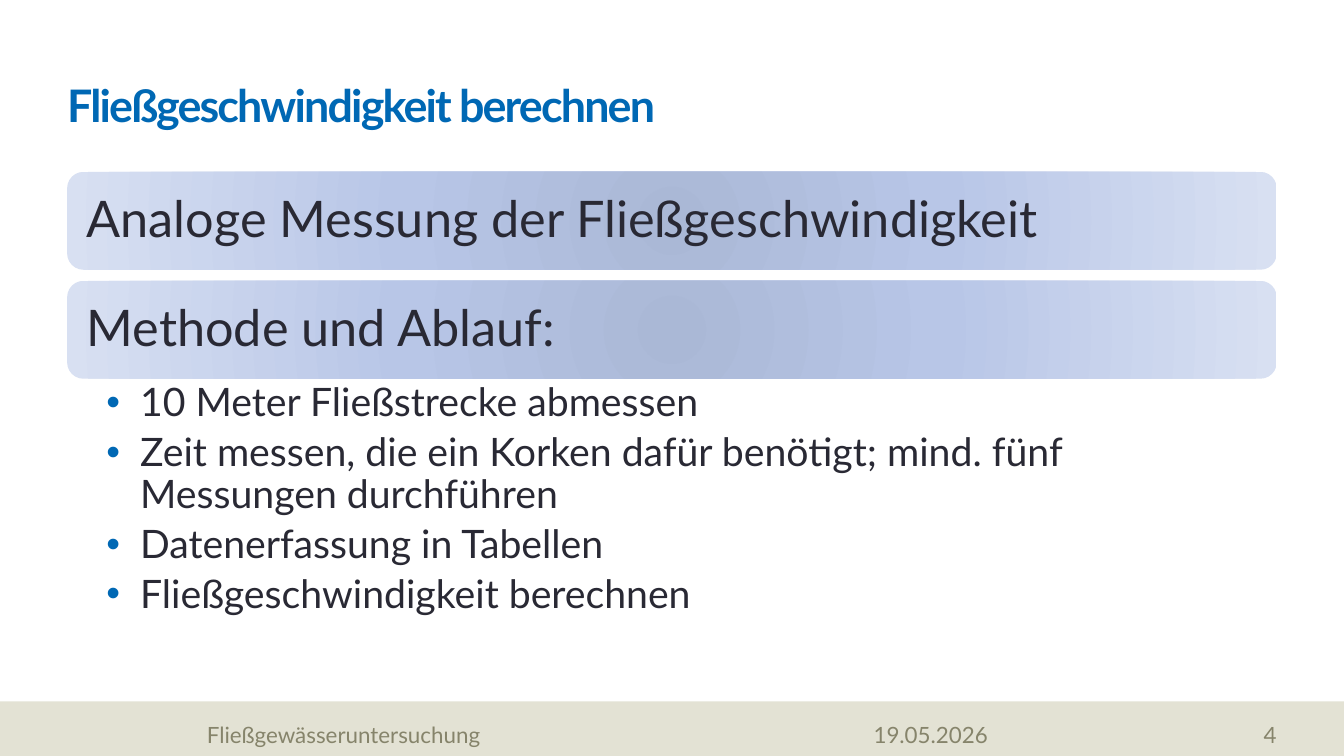
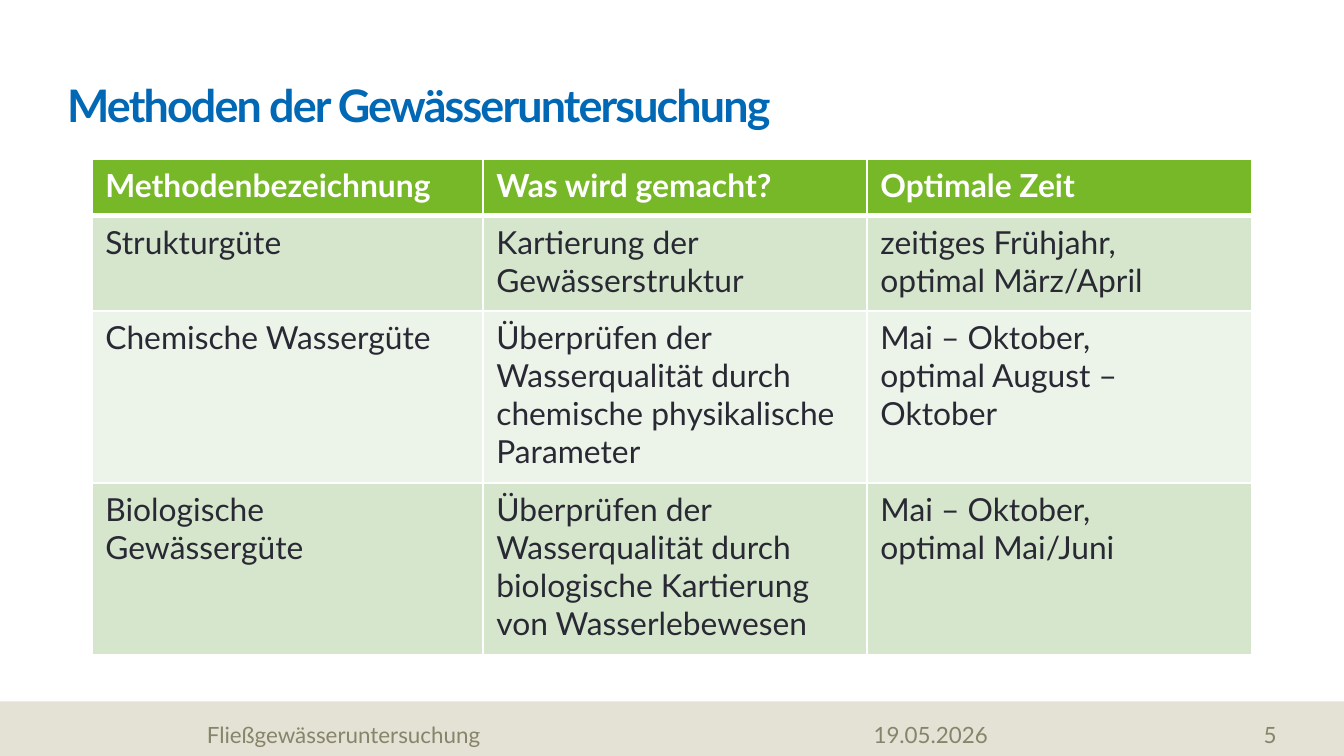
from lxml.etree import SubElement
from pptx import Presentation
from pptx.dml.color import RGBColor
from pptx.enum.shapes import MSO_SHAPE as Preset
from pptx.enum.text import MSO_ANCHOR as Anchor, MSO_AUTO_SIZE as AutoSize, PP_ALIGN as Align
from pptx.oxml.ns import qn
from pptx.util import Cm, Pt

FONT = "Lato"
BLUE, DARK, WHITE = "0068B4", "292934", "FFFFFF"
BAND, FOOTER_GREY = "E3E2D4", "86846B"
GREEN, ROW_GREENS = "76B828", ("D6E6CD", "ECF3E8")
BAR_GRADIENT = ((0, "AAB8D6"), (45, "B8C6E7"), (100, "D8E0F2"))

WIDTH, HEIGHT, MARGIN = 25.4, 14.29, 1.27
BODY_WIDTH = WIDTH - 2 * MARGIN
BAND_TOP = 13.26
BAR_TOP, BAR_HEIGHT, BAR_STEP = 3.25, 1.85, 2.06

FOOTER = "Fließgewässeruntersuchung"
DATE = "19.05.2026"

SPEED_TITLE = "Fließgeschwindigkeit berechnen"
BARS = ["Analoge Messung der Fließgeschwindigkeit", "Methode und Ablauf:"]
STEPS = [
    "10 Meter Fließstrecke abmessen",
    "Zeit messen, die ein Korken dafür benötigt; mind. fünf Messungen durchführen",
    "Datenerfassung in Tabellen",
    "Fließgeschwindigkeit berechnen",
]

METHODS_TITLE = "Methoden der Gewässeruntersuchung"
METHODS = [
    ("Methodenbezeichnung", "Was wird gemacht?", "Optimale Zeit"),
    ("Strukturgüte", "Kartierung der Gewässerstruktur",
     "zeitiges Frühjahr,\noptimal März/April"),
    ("Chemische Wassergüte",
     "Überprüfen der Wasserqualität durch chemische physikalische Parameter",
     "Mai – Oktober,\noptimal August – Oktober"),
    ("Biologische Gewässergüte",
     "Überprüfen der Wasserqualität durch biologische Kartierung von Wasserlebewesen",
     "Mai – Oktober,\noptimal Mai/Juni"),
]
COLUMN_WIDTHS = (7.39, 7.26, 7.26)
ROW_HEIGHTS = (1.07, 1.8, 3.25, 3.25)


def rgb(color):
    return RGBColor.from_string(color)


def add_bullet(paragraph, color, indent):
    properties = paragraph._p.get_or_add_pPr()
    properties.set("marL", str(Cm(indent)))
    properties.set("indent", str(-Cm(indent)))
    bullet_color = SubElement(properties, qn("a:buClr"))
    SubElement(bullet_color, qn("a:srgbClr"), val=color)
    SubElement(properties, qn("a:buFont"), typeface="Arial")
    SubElement(properties, qn("a:buChar"), char="•")


def write(frame, text, size, color, bold=False, align=Align.LEFT, line_spacing=0.9,
          space_after=0, bullet=None):
    """Fill a text frame, one paragraph for each line of text."""
    frame.text = text
    for paragraph in frame.paragraphs:
        paragraph.alignment = align
        paragraph.line_spacing = line_spacing
        paragraph.space_before = Pt(0)
        paragraph.space_after = Pt(space_after)
        if bullet:
            add_bullet(paragraph, bullet, 0.64)
        for run in paragraph.runs:
            font = run.font
            font.name, font.size, font.bold = FONT, Pt(size), bold
            font.color.rgb = rgb(color)


def set_frame(frame, anchor=Anchor.TOP, insets=(0, 0, 0, 0)):
    frame.word_wrap = True
    frame.auto_size = AutoSize.NONE
    frame.vertical_anchor = anchor
    (frame.margin_left, frame.margin_top,
     frame.margin_right, frame.margin_bottom) = map(Cm, insets)


def add_text(slide, box, text, size, color, anchor=Anchor.BOTTOM, insets=(0, 0, 0, 0), **style):
    frame = slide.shapes.add_textbox(*map(Cm, box)).text_frame
    set_frame(frame, anchor, insets)
    write(frame, text, size, color, **style)


def add_plain_shape(slide, preset, box):
    shape = slide.shapes.add_shape(preset, *map(Cm, box))
    shape.shadow.inherit = False
    shape.line.fill.background()
    return shape


def add_slide(presentation, title, number):
    """Add a slide with the shared title, band and footer."""
    slide = presentation.slides.add_slide(presentation.slide_layouts[5])
    band = add_plain_shape(slide, Preset.RECTANGLE, (0, BAND_TOP, WIDTH, HEIGHT - BAND_TOP))
    band.fill.solid()
    band.fill.fore_color.rgb = rgb(BAND)

    heading = slide.shapes.title
    heading.left, heading.top = Cm(MARGIN), Cm(0.33)
    heading.width, heading.height = Cm(BODY_WIDTH), Cm(2.16)
    set_frame(heading.text_frame, Anchor.BOTTOM)
    write(heading.text_frame, title, 24, BLUE, bold=True)
    for run in heading.text_frame.paragraphs[0].runs:
        run.font._element.set("spc", "-100")

    footers = (
        (DATE, 16.51, 6, (0, 0.13, 0.25, 0), Align.LEFT),
        (FOOTER, 3.91, 12.22, (0, 0, 0, 0), Align.LEFT),
        (str(number), 22.71, 1.42, (0, 0, 0, 0), Align.RIGHT),
    )
    for text, left, width, insets, align in footers:
        add_text(slide, (left, 13.64, width, 0.51), text, 12, FOOTER_GREY,
                 insets=insets, align=align, space_after=6)
    return slide


def fill_radial(shape, stops):
    properties = shape._element.spPr
    shape.fill.gradient()
    gradient = properties.find(qn("a:gradFill"))
    for child in list(gradient):
        gradient.remove(child)
    stop_list = SubElement(gradient, qn("a:gsLst"))
    for percent, color in stops:
        stop = SubElement(stop_list, qn("a:gs"), pos=str(percent * 1000))
        SubElement(stop, qn("a:srgbClr"), val=color)
    radial = SubElement(gradient, qn("a:path"), path="circle")
    SubElement(radial, qn("a:fillToRect"), l="50000", t="50000", r="50000", b="50000")


def add_speed_slide(presentation):
    slide = add_slide(presentation, SPEED_TITLE, 4)
    for index, text in enumerate(BARS):
        top = BAR_TOP + index * BAR_STEP
        bar = add_plain_shape(slide, Preset.ROUNDED_RECTANGLE,
                              (MARGIN, top, BODY_WIDTH, BAR_HEIGHT))
        fill_radial(bar, BAR_GRADIENT)
        add_text(slide, (MARGIN + 0.09, top + 0.09, BODY_WIDTH - 0.18, BAR_HEIGHT - 0.18),
                 text, 27, DARK, anchor=Anchor.MIDDLE, insets=(0.28,) * 4)
    add_text(slide, (MARGIN, 7.14, BODY_WIDTH, 4.98), "\n".join(STEPS), 21, DARK,
             anchor=Anchor.TOP, insets=(0.74, 0.1, 0.53, 0.1), space_after=4, bullet=BLUE)


def set_borders(cell, top=1, bottom=1):
    properties = cell._tc.get_or_add_tcPr()
    for side, points in (("L", 1), ("R", 1), ("T", top), ("B", bottom)):
        line = SubElement(properties, qn(f"a:ln{side}"), w=str(Pt(points)))
        fill = SubElement(line, qn("a:solidFill"))
        SubElement(fill, qn("a:srgbClr"), val=WHITE)


def add_methods_slide(presentation):
    slide = add_slide(presentation, METHODS_TITLE, 5)
    table = slide.shapes.add_table(
        len(METHODS), len(COLUMN_WIDTHS), Cm(1.74), Cm(3.01),
        Cm(sum(COLUMN_WIDTHS)), Cm(sum(ROW_HEIGHTS))).table
    for column, width in zip(table.columns, COLUMN_WIDTHS):
        column.width = Cm(width)
    for row_index, (texts, height) in enumerate(zip(METHODS, ROW_HEIGHTS)):
        table.rows[row_index].height = Cm(height)
        header = row_index == 0
        for column_index, text in enumerate(texts):
            cell = table.cell(row_index, column_index)
            set_borders(cell, top=3 if row_index == 1 else 1, bottom=3 if header else 1)
            cell.fill.solid()
            cell.fill.fore_color.rgb = rgb(GREEN if header else ROW_GREENS[(row_index - 1) % 2])
            cell.margin_left = cell.margin_right = Cm(0.25)
            cell.margin_top = cell.margin_bottom = Cm(0.13)
            write(cell.text_frame, text, 17, WHITE if header else DARK,
                  bold=header, line_spacing=1.0)


def main():
    presentation = Presentation()
    presentation.slide_width, presentation.slide_height = Cm(WIDTH), Cm(HEIGHT)
    add_speed_slide(presentation)
    add_methods_slide(presentation)
    presentation.save("out.pptx")


if __name__ == "__main__":
    main()
